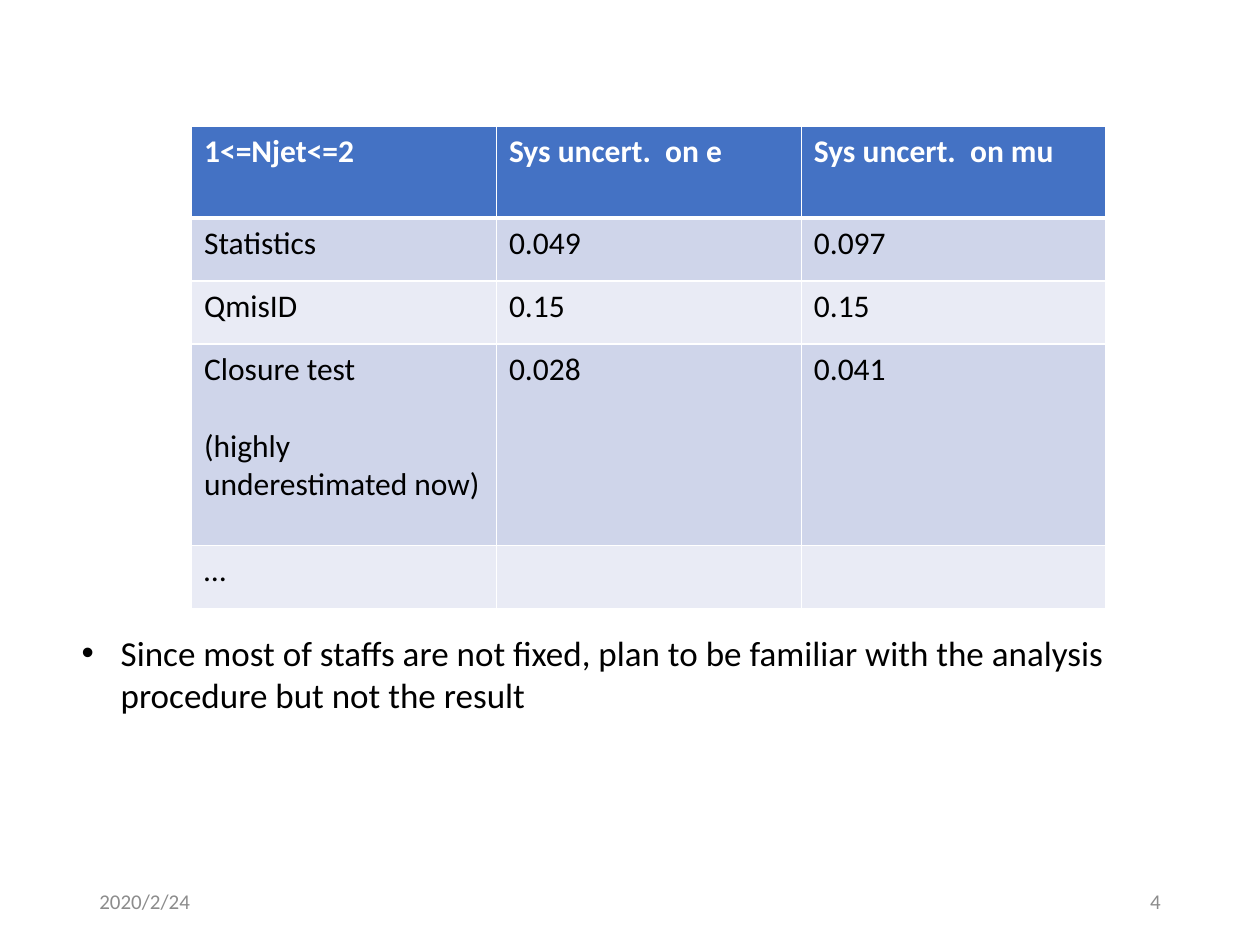
import pptx
import pptx.dml.color
import pptx.enum.text
import pptx.oxml
import pptx.oxml.ns
import pptx.util

WIDTH, HEIGHT = 10, 7.5
FONT = "Calibri"
COLORS = {
    "header": "4472C4",
    "band_dark": "CFD5EA",
    "band_light": "E9EBF5",
    "white": "FFFFFF",
    "text": "000000",
    "footer": "8C8C8C",
}
ROWS = [
    ["1<=Njet<=2", "Sys uncert.  on e", "Sys uncert.  on mu"],
    ["Statistics", "0.049", "0.097"],
    ["QmisID", "0.15", "0.15"],
    ["Closure test\n(highly underestimated now)", "0.028", "0.041"],
    ["…", "", ""],
]
ROW_HEIGHTS = [0.73, 0.5, 0.5, 1.6, 0.5]
COLUMN_WIDTH = 2.42
PARAGRAPH_GAP = 22


def inches(*values):
    return [pptx.util.Inches(v) for v in values]


def rgb(name):
    return pptx.dml.color.RGBColor.from_string(COLORS[name])


def style_font(p, size, color, bold=False):
    p.font.name = FONT
    p.font.size = pptx.util.Pt(size)
    p.font.bold = bold
    p.font.color.rgb = rgb(color)


def add_text(slide, box, text, size, color):
    s = slide.shapes.add_textbox(*inches(*box))
    tf = s.text_frame
    tf.word_wrap = True
    tf.text = text
    p = tf.paragraphs[0]
    style_font(p, size, color)
    return tf, p


def add_footer(slide, left, text, align):
    tf, p = add_text(slide, (left, 6.95, 0.225 * WIDTH, 0.4), text, 12, "footer")
    tf.vertical_anchor = pptx.enum.text.MSO_ANCHOR.MIDDLE
    p.alignment = align


def add_bullet_text(slide, box, text):
    p = add_text(slide, box, text, 20, "text")[1]
    indent = pptx.util.Inches(0.31)
    pPr = p._p.get_or_add_pPr()
    pPr.set("marL", str(indent))
    pPr.set("indent", str(-indent))
    ns = pptx.oxml.ns.nsdecls("a")
    pPr.insert(0, pptx.oxml.parse_xml(f'<a:buFont {ns} typeface="Arial"/>'))
    pPr.insert(1, pptx.oxml.parse_xml(f'<a:buChar {ns} char="•"/>'))


def set_borders(cell, bottom):
    """Draw white borders of 1 pt, with the bottom one of the given width."""
    tcPr = cell._tc.get_or_add_tcPr()
    for side, width in (("L", 1), ("R", 1), ("T", 1), ("B", bottom)):
        tcPr.append(pptx.oxml.parse_xml(
            f'<a:ln{side} {pptx.oxml.ns.nsdecls("a")} w="{pptx.util.Pt(width)}">'
            f'<a:solidFill><a:srgbClr val="{COLORS["white"]}"/></a:solidFill>'
            f'</a:ln{side}>'))


def fill_cell(cell, text, row):
    header = row == 0
    set_borders(cell, 3 if header else 1)
    cell.fill.solid()
    band = "band_dark" if row % 2 else "band_light"
    cell.fill.fore_color.rgb = rgb("header" if header else band)
    cell.text_frame.text = text
    for i, p in enumerate(cell.text_frame.paragraphs):
        style_font(p, 18, "white" if header else "text", header)
        if i:
            p.space_before = pptx.util.Pt(PARAGRAPH_GAP)


def add_uncertainty_table(slide, left, top):
    columns = len(ROWS[0])
    box = inches(left, top, columns * COLUMN_WIDTH, sum(ROW_HEIGHTS))
    table = slide.shapes.add_table(len(ROWS), columns, *box).table
    for column in table.columns:
        column.width = pptx.util.Inches(COLUMN_WIDTH)
    for r, texts in enumerate(ROWS):
        table.rows[r].height = pptx.util.Inches(ROW_HEIGHTS[r])
        for c, text in enumerate(texts):
            fill_cell(table.cell(r, c), text, r)


def main():
    prs = pptx.Presentation()
    prs.slide_width, prs.slide_height = inches(WIDTH, HEIGHT)
    slide = prs.slides.add_slide(prs.slide_layouts[6])
    align = pptx.enum.text.PP_ALIGN
    add_footer(slide, 0.69, "2020/2/24", align.LEFT)
    add_footer(slide, 7.06, "4", align.RIGHT)
    add_bullet_text(slide, (0.55, 4.96, 8.76, 0.77),
                    "Since most of staffs are not fixed, plan to be familiar "
                    "with the analysis procedure but not the result")
    add_uncertainty_table(slide, 1.52, 1)
    prs.save("out.pptx")


if __name__ == "__main__":
    main()
